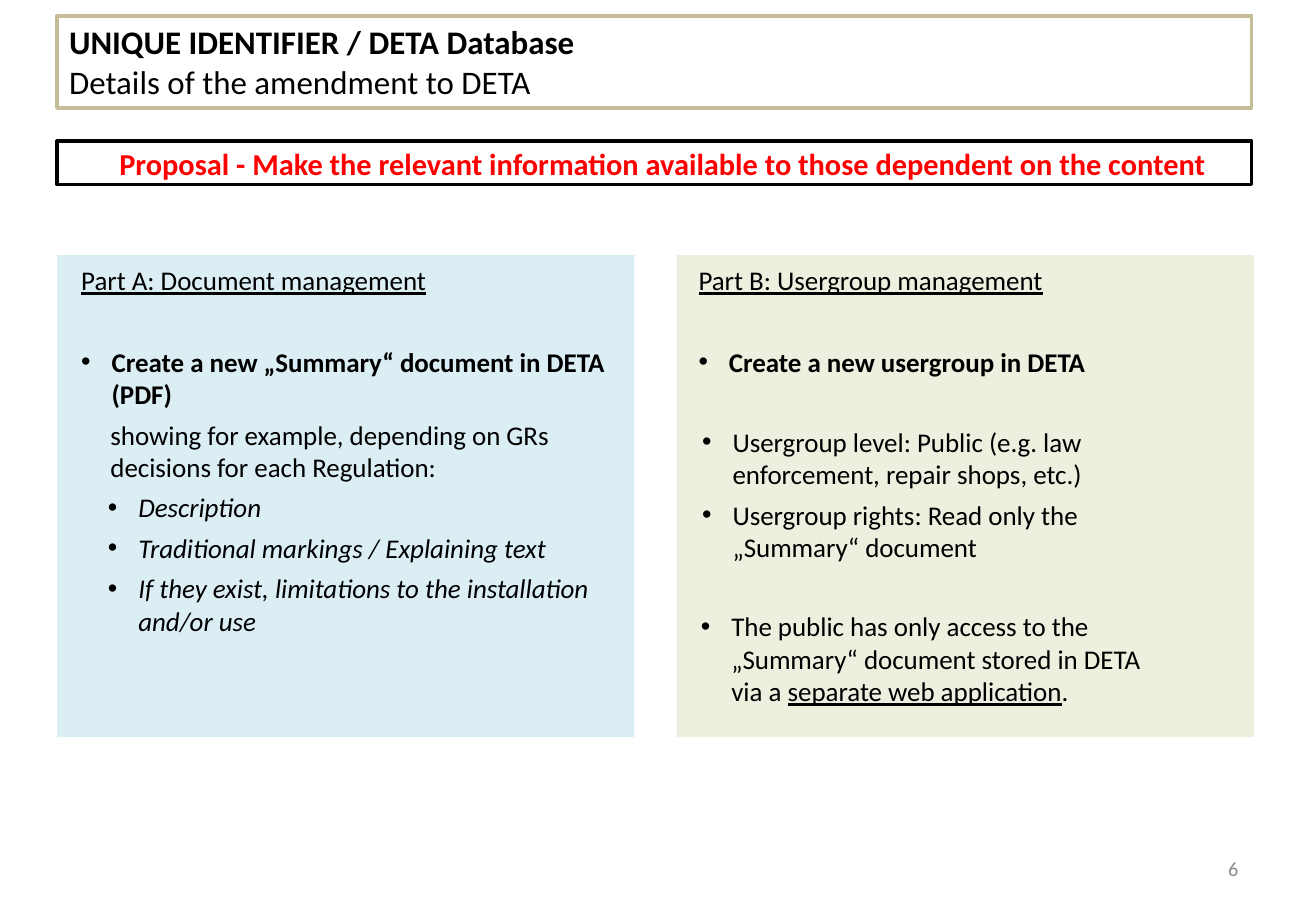
from pptx import Presentation
from pptx.dml.color import RGBColor
from pptx.enum import shapes, text
from pptx.oxml import parse_xml
from pptx.oxml.ns import nsdecls
from pptx.util import Inches, Pt

BLACK = RGBColor(0, 0, 0)
WHITE = RGBColor(255, 255, 255)
RED = RGBColor(255, 0, 0)
GRAY = RGBColor(0x8C, 0x8C, 0x8C)
TAN = RGBColor(0xC4, 0xBD, 0x97)
PALE_BLUE = RGBColor(0xDB, 0xEE, 0xF4)
PALE_GREEN = RGBColor(0xEB, 0xF1, 0xDE)

FONT = "Calibri"
LEFT, WIDTH = 0.47, 9.83
PANEL_TOP, PANEL_WIDTH, PANEL_HEIGHT = 2.1, 4.75, 3.97
GAP = 4.9
SECTION_GAP = 29.3


def add_box(slide, left, top, width, height, fill=None, line=None, weight=2):
    sp = slide.shapes.add_shape(shapes.MSO_SHAPE.RECTANGLE, Inches(left),
                                Inches(top), Inches(width), Inches(height))
    sp.shadow.inherit = False
    if fill is None:
        sp.fill.background()
    else:
        sp.fill.solid()
        sp.fill.fore_color.rgb = fill
    if line is None:
        sp.line.fill.background()
    else:
        sp.line.color.rgb = line
        sp.line.width = Pt(weight)
    return sp


def add_textbox(slide, left, top, width, height, anchor=text.MSO_ANCHOR.TOP):
    sp = slide.shapes.add_textbox(Inches(left), Inches(top), Inches(width), Inches(height))
    tf = sp.text_frame
    tf.word_wrap = True
    tf.vertical_anchor = anchor
    return tf


def add_run(p, content, size=16, color=BLACK, bold=False, italic=False, underline=False):
    r = p.add_run()
    r.text = content
    r.font.name = FONT
    r.font.size = Pt(size)
    r.font.color.rgb = color
    r.font.bold = bold
    r.font.italic = italic
    r.font.underline = underline


def add_paragraph(tf, content="", align=text.PP_ALIGN.LEFT, before=GAP, indent=0,
                  bullet=False, **font):
    p = tf.paragraphs[0]
    if p.runs:
        p = tf.add_paragraph()
    p.alignment = align
    p.space_before = Pt(before)
    pPr = p._p.get_or_add_pPr()
    pPr.set("marL", str(Inches(indent)))
    pPr.set("indent", str(Inches(-0.25 if bullet else 0)))
    if bullet:
        pPr.append(parse_xml(f'<a:buFont {nsdecls("a")} typeface="Arial"/>'))
        pPr.append(parse_xml(f'<a:buChar {nsdecls("a")} char="•"/>'))
    if content:
        add_run(p, content, **font)
    return p


def add_panel(slide, left, fill, text_left, heading, lead):
    add_box(slide, left, PANEL_TOP, PANEL_WIDTH, PANEL_HEIGHT, fill=fill)
    tf = add_textbox(slide, text_left, 2.12, 4.55, 1.93)
    add_paragraph(tf, heading, underline=True)
    add_paragraph(tf, lead, before=SECTION_GAP, indent=0.25, bullet=True, bold=True)
    return tf


def add_bullets(slide, left, top, width, height, items, **font):
    tf = add_textbox(slide, left, top, width, height)
    for item in items:
        add_paragraph(tf, item, indent=0.66, bullet=True, **font)


def main():
    prs = Presentation()
    prs.slide_width, prs.slide_height = Inches(10.83), Inches(7.5)
    slide = prs.slides.add_slide(prs.slide_layouts[6])

    title = add_box(slide, LEFT, 0.13, WIDTH, 0.76, line=TAN, weight=2.25).text_frame
    title.word_wrap = True
    title.vertical_anchor = text.MSO_ANCHOR.TOP
    add_paragraph(title, "UNIQUE IDENTIFIER / DETA Database", before=0, size=19.5, bold=True)
    add_paragraph(title, "Details of the amendment to DETA", before=0, size=19.5)

    add_box(slide, LEFT, 1.16, WIDTH, 0.36, fill=WHITE, line=BLACK)
    proposal = add_textbox(slide, 0.62, 1.15, 9.67, 0.4)
    add_paragraph(proposal, "Proposal - Make the relevant information available to those "
                  "dependent on the content", align=text.PP_ALIGN.CENTER,
                  size=18, color=RED, bold=True)

    documents = add_panel(slide, LEFT, PALE_BLUE, 0.57, "Part A: Document management",
                          "Create a new „Summary“ document in DETA (PDF)")
    add_paragraph(documents, "showing for example, depending on GRs decisions for each "
                  "Regulation:", indent=0.24)
    add_bullets(slide, 0.38, 3.99, 4.74, 1.32,
                ["Description", "Traditional markings / Explaining text",
                 "If they exist, limitations to the installation and/or use"], italic=True)

    add_panel(slide, 5.57, PALE_GREEN, 5.65, "Part B: Usergroup management",
              "Create a new usergroup in DETA")
    add_bullets(slide, 5.27, 3.45, 4.55, 1.25,
                ["Usergroup level: Public (e.g. law enforcement, repair shops, etc.)",
                 "Usergroup rights: Read only the „Summary“ document"])
    access = add_textbox(slide, 5.26, 4.97, 4.55, 0.91)
    p = add_paragraph(access, "The public has only access to the „Summary“ document "
                      "stored in DETA ", indent=0.66, bullet=True)
    p.add_line_break()
    add_run(p, "via a ")
    add_run(p, "separate web application", underline=True)
    add_run(p, ".")

    number = add_textbox(slide, 7.76, 6.95, 2.53, 0.4, anchor=text.MSO_ANCHOR.MIDDLE)
    add_paragraph(number, "6", align=text.PP_ALIGN.RIGHT, before=0, size=12, color=GRAY)

    prs.save("out.pptx")


if __name__ == "__main__":
    main()
